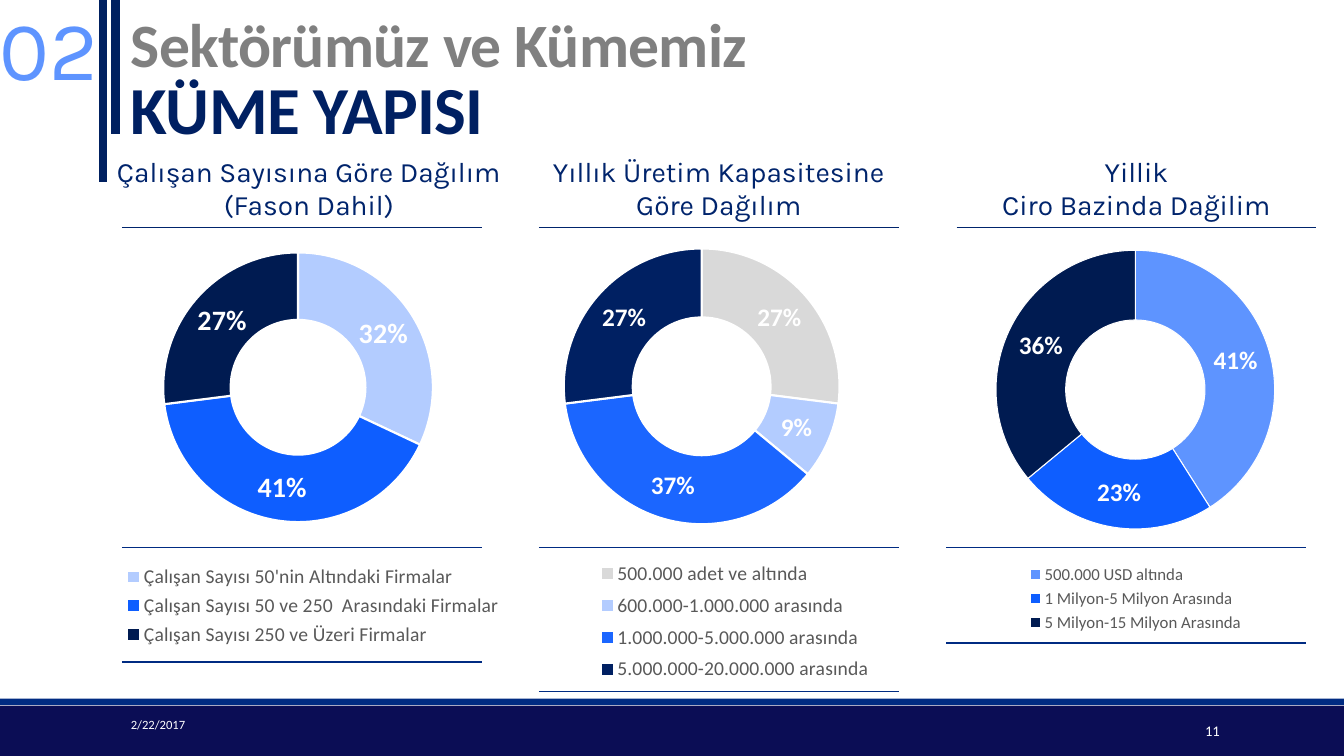
from lxml import etree
from pptx import Presentation
from pptx import util as u
from pptx.chart.data import CategoryChartData
from pptx.dml.color import RGBColor
from pptx.enum import chart as kinds
from pptx.enum import shapes, text
from pptx.oxml.ns import qn

COLORS = {
    "white": "FFFFFF", "grey": "808080", "silver": "D9D9D9", "legend": "595959",
    "footer": "0B0D55", "strip": "002B82", "bar": "002060", "title": "002062",
    "heading": "00246C", "pale": "B3CCFF", "sky": "5E94FF", "blue": "0E5EFF",
    "bright": "1B66FF", "night": "001B51",
}


class ClusterSlide:
    def __init__(self, deck):
        self.page = deck.slides.add_slide(deck.slide_layouts[6])
        self.font = "Calibri"
        self.heading_font = "Karla"

    def color(self, name):
        return RGBColor.from_string(COLORS[name])

    def style(self, font, size, color, bold=False, face=None):
        font.name = face or self.font
        font.size = u.Pt(size)
        font.bold = bold
        font.color.rgb = self.color(color)

    def band(self, top, height, color):
        shape = self.page.shapes.add_shape(
            shapes.MSO_SHAPE.RECTANGLE, 0, u.Pt(top), u.Pt(960), u.Pt(height))
        shape.shadow.inherit = False
        shape.fill.solid()
        shape.fill.fore_color.rgb = self.color(color)
        shape.line.fill.background()

    def line(self, start, end, color, width=1):
        line = self.page.shapes.add_connector(
            shapes.MSO_CONNECTOR.STRAIGHT, *(u.Pt(value) for value in start + end))
        line.line.color.rgb = self.color(color)
        line.line.width = u.Pt(width)
        etree.SubElement(line._element.spPr, qn("a:effectLst"))

    def box(self, frame, anchor):
        box = self.page.shapes.add_textbox(*(u.Pt(value) for value in frame))
        box.text_frame.word_wrap = True
        box.text_frame.vertical_anchor = anchor
        return box.text_frame

    def span(self, para, words, size, color, bold=False, face=None):
        span = para.add_run()
        span.text = words
        self.style(span.font, size, color, bold, face)
        return span

    def title(self, lines):
        para = self.box((86.4, 1.4, 792, 108), text.MSO_ANCHOR.BOTTOM).paragraphs[0]
        para.line_spacing = 0.85
        for index, (words, size, color) in enumerate(lines):
            if index:
                para.add_line_break()
            span = self.span(para, words, size, color, True)
            span.font._element.set("spc", "-50")

    def label(self, frame, lines, size, color, align=text.PP_ALIGN.LEFT,
              anchor=text.MSO_ANCHOR.MIDDLE, face=None):
        body = self.box(frame, anchor)
        for index, words in enumerate(lines):
            para = body.add_paragraph() if index else body.paragraphs[0]
            para.alignment = align
            self.span(para, words, size, color, face=face)

    def layout(self, fractions, inner=False):
        layout = etree.Element(qn("c:layout"))
        manual = etree.SubElement(layout, qn("c:manualLayout"))
        settings = [("layoutTarget", "inner")] if inner else []
        settings += [("xMode", "edge"), ("yMode", "edge")]
        settings += list(zip("xywh", fractions))
        for name, value in settings:
            etree.SubElement(manual, qn("c:" + name)).set("val", str(value))
        return layout

    def doughnut(self, frame, plot, legend, slices, label_size, legend_size, edge, percent):
        data = CategoryChartData()
        data.categories = [name for name, value, color in slices]
        data.add_series("Series 1", [value for name, value, color in slices])
        chart = self.page.shapes.add_chart(
            kinds.XL_CHART_TYPE.DOUGHNUT, *(u.Pt(value) for value in frame), data).chart
        chart.has_title = False
        chart.font.name = self.font
        chart.font.size = u.Pt(10)
        chart.plots[0].vary_by_categories = True

        series = chart.plots[0].series[0]
        for index, (name, value, color) in enumerate(slices):
            look = series.points[index].format
            look.fill.solid()
            look.fill.fore_color.rgb = self.color(color)
            look.line.color.rgb = self.color("white")
            look.line.width = u.Pt(edge)
        labels = series.data_labels
        labels.show_percentage = percent
        labels.show_value = not percent
        labels.number_format = "0%"
        labels.number_format_is_linked = False
        self.style(labels.font, label_size, "white", True)

        chart.has_legend = True
        chart.legend.position = kinds.XL_LEGEND_POSITION.BOTTOM
        chart.legend.include_in_layout = False
        self.style(chart.legend.font, legend_size, "legend")
        key = chart.legend._element
        area = chart._chartSpace.find(".//" + qn("c:plotArea"))
        for parent in (key, area):
            for old in parent.findall(qn("c:layout")):
                parent.remove(old)
        key.find(qn("c:legendPos")).addnext(self.layout(legend))
        area.insert(0, self.layout(plot, True))


COLUMNS = [
    dict(heading=["Çalışan Sayısına Göre Dağılım (Fason Dahil)"],
         heading_frame=(55.4, 106.6, 330.5, 55.4), top_left=87, left=87, bottom=473,
         chart=dict(frame=(6.5, 103, 398.9, 371.5), plot=(0.276, 0.208, 0.483, 0.519),
                    legend=(0.195, 0.8, 0.7, 0.175), label_size=20, legend_size=14,
                    edge=1.5, percent=True,
                    slices=[("Çalışan Sayısı 50'nin Altındaki Firmalar", 32, "pale"),
                            ("Çalışan Sayısı 50 ve 250  Arasındaki Firmalar", 41, "blue"),
                            ("Çalışan Sayısı 250 ve Üzeri Firmalar", 27, "night")])),
    dict(heading=["Yıllık Üretim Kapasitesine", "Göre Dağılım"],
         heading_frame=(385, 106.6, 257, 55.4), top_left=385, left=385, bottom=494,
         chart=dict(frame=(279.4, 87.1, 481.7, 421.2), plot=(0.256, 0.184, 0.409, 0.529),
                    legend=(0.3, 0.732, 0.42, 0.23), label_size=18, legend_size=14,
                    edge=1.5, percent=False,
                    slices=[("500.000 adet ve altında", 0.27, "silver"),
                            ("600.000-1.000.000 arasında", 0.09, "pale"),
                            ("1.000.000-5.000.000 arasında", 0.37, "bright"),
                            ("5.000.000-20.000.000 arasında", 0.27, "title")])),
    dict(heading=["Yillik", "Ciro Bazinda Dağilim"],
         heading_frame=(683.3, 106.6, 257, 55.4), top_left=683.3, left=676, bottom=459.4,
         chart=dict(frame=(583.9, 104.4, 388.8, 368.6), plot=(0.328, 0.18, 0.512, 0.584),
                    legend=(0.375, 0.804, 0.42, 0.147), label_size=18, legend_size=12,
                    edge=0.75, percent=True,
                    slices=[("500.000 USD altında", 41, "sky"),
                            ("1 Milyon-5 Milyon Arasında", 23, "blue"),
                            ("5 Milyon-15 Milyon Arasında", 36, "night")])),
]


def main():
    deck = Presentation()
    deck.slide_width, deck.slide_height = u.Pt(960), u.Pt(540)
    slide = ClusterSlide(deck)
    slide.band(504, 36, "footer")
    slide.band(499, 4.5, "strip")
    for left, bottom in ((82.6, 95.8), (73.4, 130.3)):
        slide.line((left, 0), (left, bottom), "bar", 6)
    slide.title([("Sektörümüz ve Kümemiz", 44, "grey"), ("KÜME YAPISI", 48, "title")])
    slide.label((86.4, 503.3, 194.4, 28.8), ["2/22/2017"], 9, "white")
    slide.label((775.4, 507.6, 103, 28.8), ["11"], 10.5, "white", text.PP_ALIGN.RIGHT)

    for column in COLUMNS:
        slide.doughnut(**column["chart"])
        for left, top, color in ((column["left"], 391, "strip"),
                                 (column["left"], column["bottom"], "strip"),
                                 (column["top_left"], 162.7, "heading")):
            slide.line((left, top), (left + 257, top), color)
        slide.label(column["heading_frame"], column["heading"], 20, "heading",
                    text.PP_ALIGN.CENTER, text.MSO_ANCHOR.TOP, slide.heading_font)

    slide.label((-14.4, -5.8, 91.4, 79.9), ["02"], 60, "sky",
                text.PP_ALIGN.RIGHT, text.MSO_ANCHOR.TOP, slide.heading_font)
    deck.save("out.pptx")


if __name__ == "__main__":
    main()
